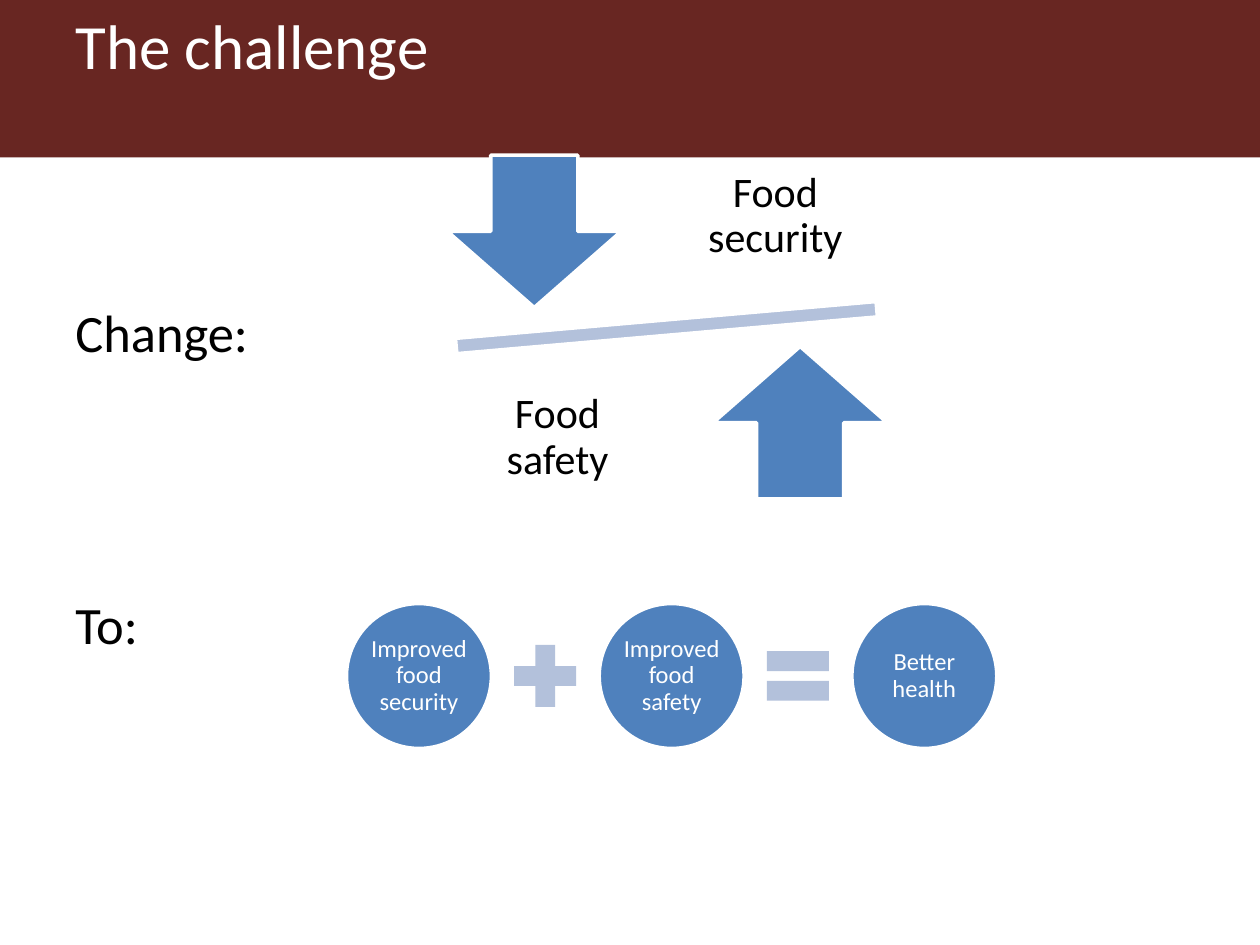
from pptx import Presentation
from pptx.dml.color import RGBColor
from pptx.enum import shapes, text
from pptx.util import Pt

MAROON = RGBColor(0x68, 0x26, 0x22)
BLUE = RGBColor(0x4F, 0x81, 0xBD)
PALE_BLUE = RGBColor(0xB3, 0xC1, 0xDB)
WHITE = RGBColor(0xFF, 0xFF, 0xFF)
BLACK = RGBColor(0, 0, 0)
FONT = "Calibri"
SHAPE = shapes.MSO_SHAPE
ALIGN = text.PP_ALIGN
ANCHOR = text.MSO_ANCHOR


def write_text(shape, *lines, size, color, align=ALIGN.LEFT, anchor=ANCHOR.TOP,
               spacing=1.0, gap=0, margins=(7.2, 3.6)):
    """Fill a shape with one paragraph per line; gap is the space between them."""
    frame = shape.text_frame
    frame.word_wrap = True
    frame.auto_size = text.MSO_AUTO_SIZE.NONE
    frame.vertical_anchor = anchor
    frame.margin_left = frame.margin_right = Pt(margins[0])
    frame.margin_top = frame.margin_bottom = Pt(margins[1])
    for index, line in enumerate(lines):
        paragraph = frame.paragraphs[0] if index == 0 else frame.add_paragraph()
        paragraph.alignment = align
        paragraph.line_spacing = spacing
        paragraph.space_before = Pt(gap if index else 0)
        run = paragraph.add_run()
        run.text = line
        run.font.name = FONT
        run.font.size = Pt(size)
        run.font.color.rgb = color


def add_shape(slide, kind, left, top, width, height, fill, outlined=True):
    shape = slide.shapes.add_shape(kind, Pt(left), Pt(top), Pt(width), Pt(height))
    shape.shadow.inherit = False
    shape.fill.solid()
    shape.fill.fore_color.rgb = fill
    if outlined:
        shape.line.color.rgb = WHITE
        shape.line.width = Pt(2)
    else:
        shape.line.fill.background()
    return shape


def add_text(slide, left, top, width, height, *lines, **style):
    box = slide.shapes.add_textbox(Pt(left), Pt(top), Pt(width), Pt(height))
    write_text(box, *lines, **style)


def add_header(slide):
    band = add_shape(slide, SHAPE.RECTANGLE, 0, 0, 720, 90, MAROON, outlined=False)
    title = slide.shapes.title
    title._element.addprevious(band._element)  # the band lies behind the title
    title.left, title.top, title.width, title.height = Pt(36), Pt(0), Pt(648), Pt(90)
    write_text(title, "The challenge", size=36, color=WHITE)


def add_balance(slide):
    beam = add_shape(slide, SHAPE.MATH_MINUS, 216.7, 168.5, 328.3, 37.4, PALE_BLUE)
    beam.rotation = 355
    arrows = [(SHAPE.DOWN_ARROW, 255.6, 88.6), (SHAPE.UP_ARROW, 407.5, 198)]
    for kind, left, top in arrows:
        add_shape(slide, kind, left, top, 99.4, 87.1, BLUE)
    labels = [("Food security", 390.2, 77.8), ("Food safety", 265.7, 204.5)]
    for label, left, top in labels:
        add_text(slide, left, top, 105.8, 91.4, label, size=24, color=BLACK,
                 align=ALIGN.CENTER, anchor=ANCHOR.MIDDLE, spacing=0.9,
                 margins=(13.7, 13.7))


def add_equation(slide):
    diameter, symbol, step = 82.8, 48.2, 144.4
    left, top = 198, 344.9
    terms = ["Improved food security", "Improved food safety", "Better health"]
    for index, term in enumerate(terms):
        circle = add_shape(slide, SHAPE.OVAL, left + index * step, top,
                           diameter, diameter, BLUE)
        write_text(circle, term, size=14, color=WHITE, align=ALIGN.CENTER,
                   anchor=ANCHOR.MIDDLE, spacing=0.9, margins=(1.4, 1.4))
    # Each operator is centred in the gap between two circles
    first_operator = left + (diameter + step - symbol) / 2
    for index, kind in enumerate([SHAPE.MATH_PLUS, SHAPE.MATH_EQUAL]):
        add_shape(slide, kind, first_operator + index * step,
                  top + (diameter - symbol) / 2, symbol, symbol, PALE_BLUE,
                  outlined=False)


def main():
    presentation = Presentation()
    presentation.slide_width, presentation.slide_height = Pt(720), Pt(540)
    slide = presentation.slides.add_slide(presentation.slide_layouts[5])

    add_header(slide)
    # Row headings
    add_text(slide, 36, 131.8, 648, 360, "Change:", "To:", size=30, color=BLACK,
             spacing=2.0, gap=95)
    add_balance(slide)
    add_equation(slide)

    presentation.save("out.pptx")


if __name__ == "__main__":
    main()
